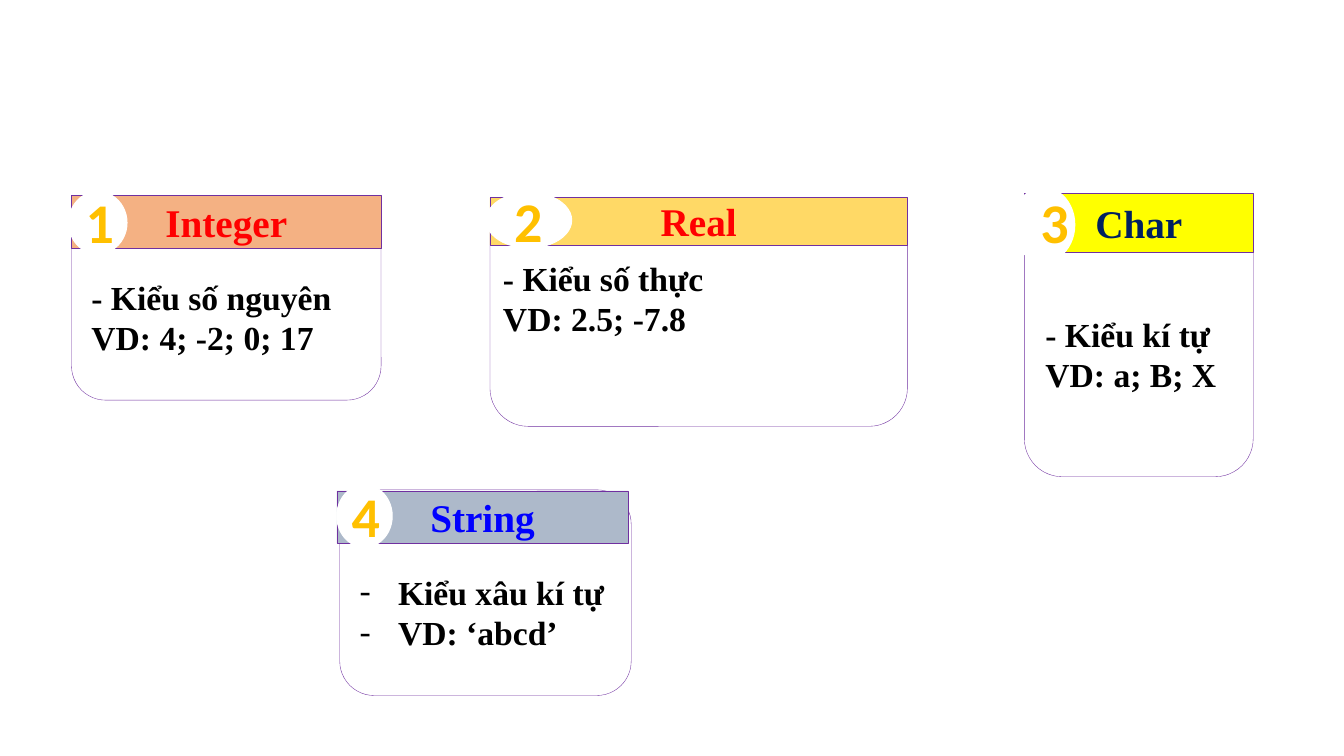
import pptx
import pptx.util
import pptx.dml.color
import pptx.enum.shapes
import pptx.enum.text
import pptx.oxml.ns
import lxml.etree

PX = 9144
SIZE = (1333, 750)
COLORS = {"white": "FFFFFF", "black": "000000", "purple": "7030A0", "gold": "FFC000",
          "orange": "F4B183", "sand": "FFD966", "yellow": "FFFF00", "gray": "ADB9CA",
          "red": "FF0000", "navy": "002060", "blue": "0000FF"}
SERIF = "Times New Roman"
CARDS = [
    {"name": "Integer", "fill": "orange", "color": "red",
     "lines": ["- Kiểu số nguyên", "VD: 4; -2; 0; 17"],
     "body": (71, 194, 307, 203), "header": (71, 194, 307, 52),
     "oval": (68, 190, 58, 62), "digit": (75, 181, 40, 77)},
    {"name": "Real", "fill": "sand", "color": "red",
     "lines": ["- Kiểu số thực", "VD: 2.5; -7.8"],
     "body": (486, 196, 414, 227), "header": (486, 196, 414, 47),
     "oval": (482, 191, 85, 55), "digit": (495, 180, 58, 69),
     "label": (489, 251, 408, 91)},
    {"name": "Char", "fill": "yellow", "color": "navy",
     "lines": ["- Kiểu kí tự", "VD: a; B; X"],
     "body": (1016, 192, 227, 281), "header": (1016, 192, 227, 58),
     "oval": (1004, 186, 62, 74), "digit": (1022, 181, 29, 77)},
    {"name": "String", "fill": "gray", "color": "blue", "bullet": "-",
     "lines": ["Kiểu xâu kí tự", "VD: ‘abcd’"],
     "body": (337, 486, 289, 204), "header": (334, 487, 289, 52),
     "oval": (334, 481, 55, 62), "digit": (339, 473, 37, 77)},
]
BODY_TOP = 43
BULLET_INDENT = 38

SHAPE = pptx.enum.shapes.MSO_SHAPE
ALIGN = pptx.enum.text.PP_ALIGN
ANCHOR = pptx.enum.text.MSO_ANCHOR


def rgb(name):
    return pptx.dml.color.RGBColor.from_string(COLORS[name])


def emu(box):
    return [v * PX for v in box]


def add_box(shapes, kind, box, fill, line="purple", width=0.25):
    sp = shapes.add_shape(kind, *emu(box))
    sp.shadow.inherit = False
    sp.fill.solid()
    sp.fill.fore_color.rgb = rgb(fill)
    sp.line.color.rgb = rgb(line)
    sp.line.width = pptx.util.Pt(width)
    return sp


def add_bullet(p, char):
    pPr = p._p.get_or_add_pPr()
    pPr.set("marL", str(BULLET_INDENT * PX))
    pPr.set("indent", str(-BULLET_INDENT * PX))
    qn = pptx.oxml.ns.qn
    lxml.etree.SubElement(pPr, qn("a:buFont")).set("typeface", SERIF)
    lxml.etree.SubElement(pPr, qn("a:buChar")).set("char", char)


def write(sp, lines, size=24, font=SERIF, color="black", align=ALIGN.CENTER,
          anchor=ANCHOR.MIDDLE, top=5, bullet=None):
    tf = sp.text_frame
    tf.word_wrap = True
    tf.vertical_anchor = anchor
    tf.margin_top = top * PX
    for i, text in enumerate(lines):
        p = tf.add_paragraph() if i else tf.paragraphs[0]
        p.alignment = align
        if bullet:
            add_bullet(p, bullet)
        r = p.add_run()
        r.text = text
        r.font.size = pptx.util.Pt(size)
        r.font.name = font
        r.font.bold = True
        r.font.color.rgb = rgb(color)


def add_card(s, number, card):
    shapes = s.shapes.add_group_shape().shapes
    body = add_box(shapes, SHAPE.ROUNDED_RECTANGLE, card["body"], "white")
    if "label" not in card:
        write(body, card["lines"], align=ALIGN.LEFT, top=BODY_TOP, bullet=card.get("bullet"))
    header = add_box(shapes, SHAPE.RECTANGLE, card["header"], card["fill"])
    write(header, [card["name"]], size=28, color=card["color"])
    add_box(shapes, SHAPE.OVAL, card["oval"], "white", line="white", width=0.75)
    digit = shapes.add_textbox(*emu(card["digit"]))
    write(digit, [str(number)], size=40, font="Calibri", color="gold", anchor=ANCHOR.TOP)
    if "label" in card:
        label = shapes.add_textbox(*emu(card["label"]))
        write(label, card["lines"], align=ALIGN.JUSTIFY, anchor=ANCHOR.TOP)


def main():
    prs = pptx.Presentation()
    prs.slide_width, prs.slide_height = emu(SIZE)
    s = prs.slides.add_slide(prs.slide_layouts[6])
    for number, card in enumerate(CARDS, 1):
        add_card(s, number, card)
    prs.save("out.pptx")


if __name__ == "__main__":
    main()
